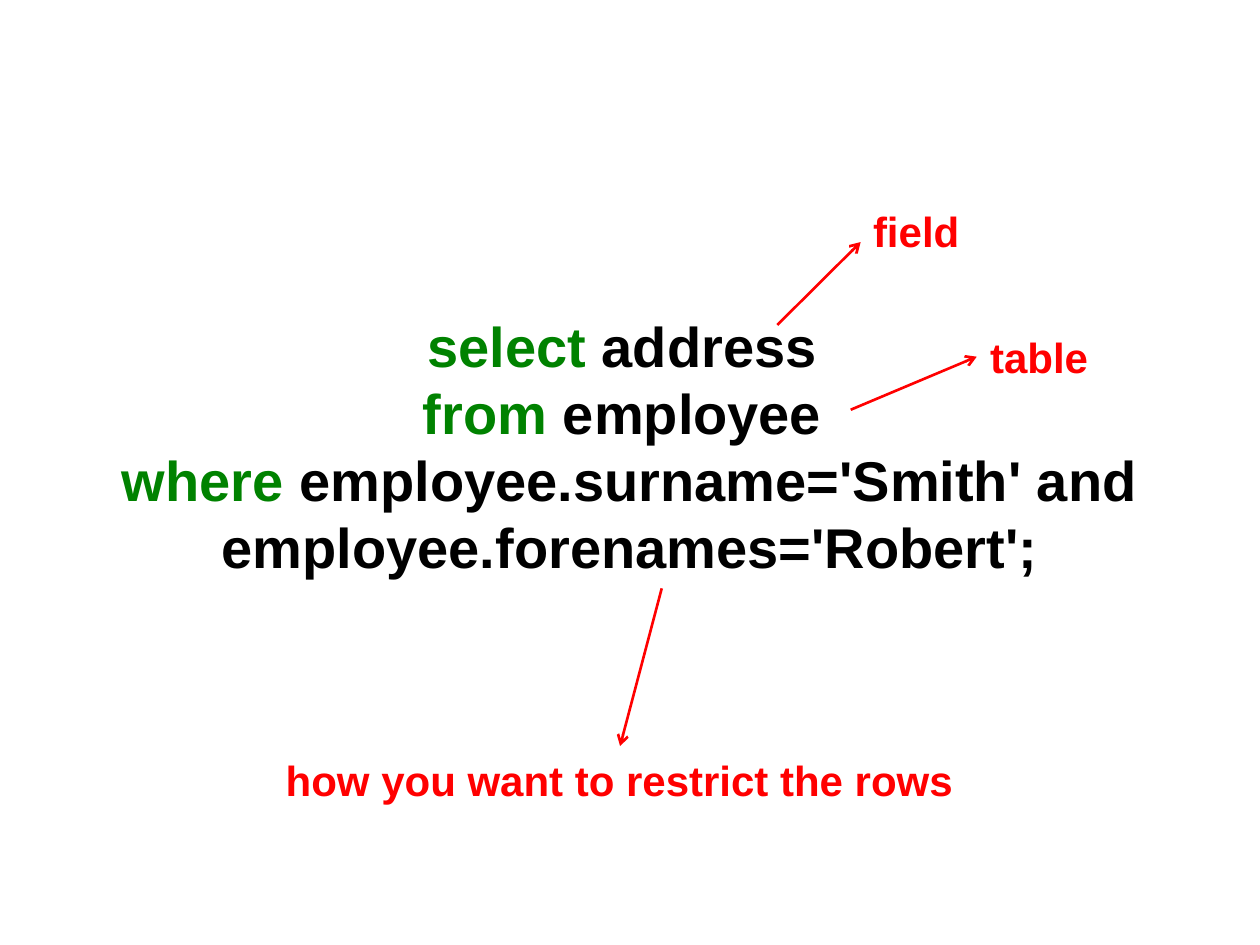
from dataclasses import dataclass

from lxml.etree import SubElement
from pptx import Presentation
from pptx.dml.color import RGBColor
from pptx.enum.shapes import MSO_CONNECTOR
from pptx.enum.text import MSO_AUTO_SIZE, PP_ALIGN
from pptx.oxml.ns import qn
from pptx.slide import Slide
from pptx.text.text import Font, TextFrame
from pptx.util import Cm, Pt

KEYWORD = "008200"
CODE = "000000"
NOTE = "FF0000"


@dataclass
class Annotation:
    """A label in a box and the arrow leading to it; lengths in cm."""
    text: str
    box: tuple[float, float, float, float]
    start: tuple[float, float]
    end: tuple[float, float]


QUERY_BOX = (0.84, 6.15, 23.72, 5.74)
QUERY = [
    ("select", " address "),
    ("from", " employee "),
    ("where ", "employee.surname='Smith' and employee.forenames='Robert';"),
]
ANNOTATIONS = [
    Annotation("field", (17.35, 4.01, 2.26, 1.3), (15.67, 6.55), (17.35, 4.88)),
    Annotation("table", (19.71, 6.55, 2.51, 1.3), (17.15, 8.26), (19.69, 7.19)),
    Annotation("how you want to restrict the rows", (5.51, 15.09, 14.1, 1.27),
               (13.34, 11.86), (12.5, 15.04)),
]


def color(hex_value: str) -> RGBColor:
    return RGBColor.from_string(hex_value)


def set_font(font: Font, size: int) -> None:
    font.name = "Arial"
    font.size = Pt(size)
    font.bold = True


def add_text_frame(page: Slide, box: tuple[float, ...], wrap: bool) -> TextFrame:
    frame = page.shapes.add_textbox(*map(Cm, box)).text_frame
    frame.word_wrap = wrap
    frame.auto_size = MSO_AUTO_SIZE.SHAPE_TO_FIT_TEXT
    return frame


def add_query(page: Slide) -> None:
    frame = add_text_frame(page, QUERY_BOX, wrap=True)
    for index, (keyword, rest) in enumerate(QUERY):
        para = frame.add_paragraph() if index else frame.paragraphs[0]
        para.alignment = PP_ALIGN.CENTER
        set_font(para.font, 32)
        for text, hex_value in ((keyword, KEYWORD), (rest, CODE)):
            span = para.add_run()
            span.text = text
            span.font.color.rgb = color(hex_value)


def add_arrow(page: Slide, start: tuple[float, float], end: tuple[float, float]) -> None:
    arrow = page.shapes.add_connector(MSO_CONNECTOR.STRAIGHT, *map(Cm, start + end))
    arrow.line.color.rgb = color(NOTE)
    arrow.line.width = Pt(1.5)
    SubElement(arrow.line._get_or_add_ln(), qn("a:tailEnd"), type="arrow")
    SubElement(arrow._element.spPr, qn("a:effectLst"))


def add_annotation(page: Slide, note: Annotation) -> None:
    para = add_text_frame(page, note.box, wrap=False).paragraphs[0]
    para.text = note.text
    set_font(para.font, 24)
    para.font.color.rgb = color(NOTE)
    add_arrow(page, note.start, note.end)


def main() -> None:
    deck = Presentation()
    deck.slide_width, deck.slide_height = Cm(25.4), Cm(19.05)
    blank_layout = deck.slide_layouts[6]
    page = deck.slides.add_slide(blank_layout)
    add_query(page)
    for note in ANNOTATIONS:
        add_annotation(page, note)
    deck.save("out.pptx")


if __name__ == "__main__":
    main()
